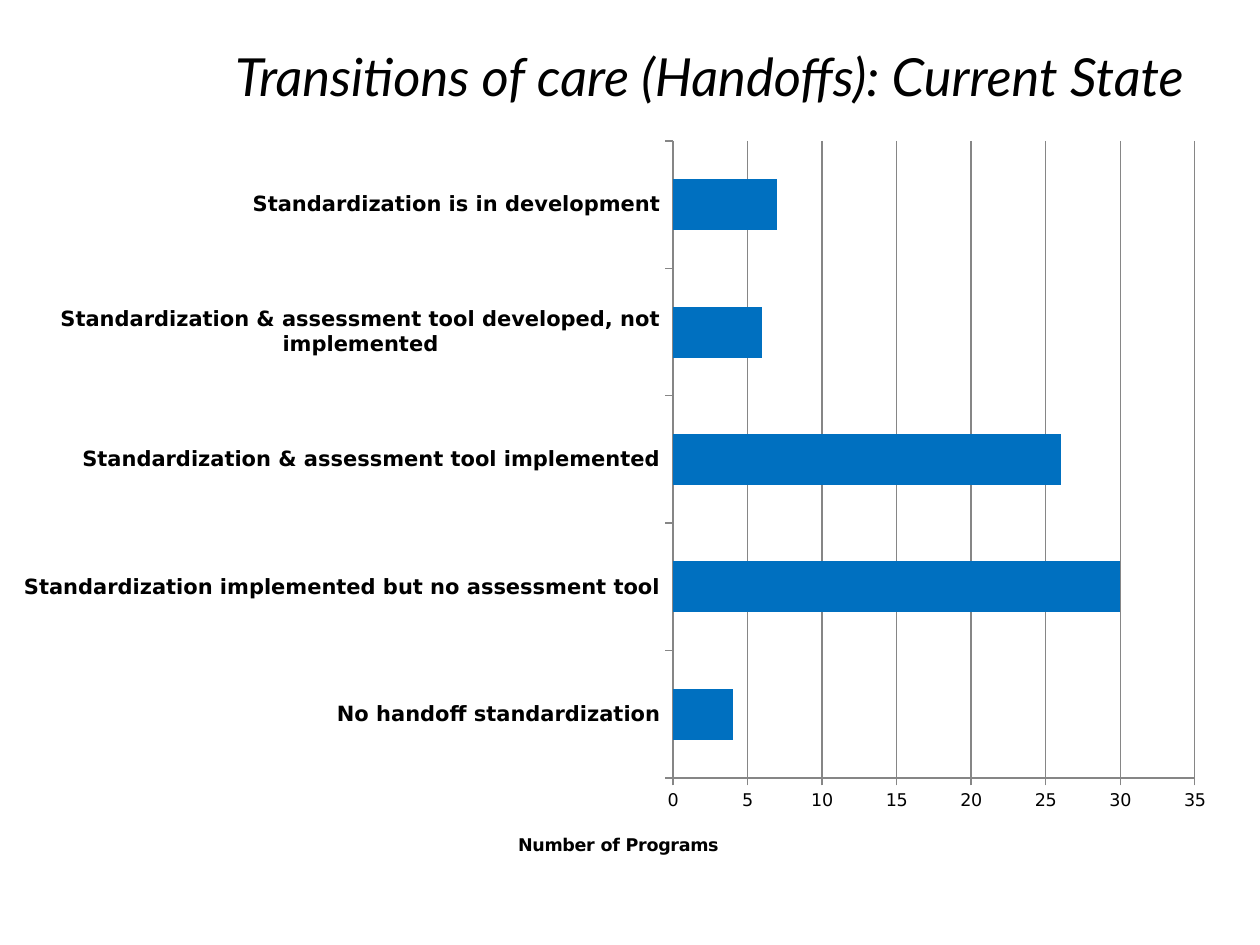
"""Build the slide on the current state of handoff standardization."""
from dataclasses import dataclass
from typing import NamedTuple

from lxml import etree
from pptx import Presentation, util as u
from pptx.chart.data import CategoryChartData
from pptx.dml.color import RGBColor
from pptx.enum import chart as ch, text
from pptx.oxml.ns import qn

EMU_PER_PX = 914400 / 126


@dataclass(frozen=True)
class Theme:
    """Colours, fonts and type sizes of the slide."""
    ink: RGBColor = RGBColor(0x00, 0x00, 0x00)
    bar: RGBColor = RGBColor(0x00, 0x70, 0xC0)
    rule: RGBColor = RGBColor(0x86, 0x86, 0x86)
    title_font: str = "Lato"
    chart_font: str = "DejaVu Sans"
    title_size: int = 30
    category_size: int = 12
    chart_size: int = 10


class Box(NamedTuple):
    """A rectangle in px."""
    left: int
    top: int
    width: int
    height: int


class Status(NamedTuple):
    """A handoff status and its number of programs."""
    label: str
    programs: int


THEME = Theme()
TITLE = Box(63, 38, 1134, 158)
CHART = Box(0, 126, 1231, 751)
PLOT = Box(673, 141, 522, 637)
AXIS_TITLE = Box(515, 831, 200, 18)
STATUSES = [
    Status("No handoff standardization", 4),
    Status("Standardization implemented but no assessment tool", 30),
    Status("Standardization & assessment tool implemented", 26),
    Status("Standardization & assessment tool developed, not implemented", 6),
    Status("Standardization is in development", 7),
]


def px(length: int) -> u.Emu:
    """Turn px into EMU."""
    return u.Emu(round(length * EMU_PER_PX))


def style(font, size: int, name: str, bold: bool = False, italic: bool = False) -> None:
    """Format a font in the ink colour."""
    font.size, font.name = u.Pt(size), name
    font.bold, font.italic = bold, italic
    font.color.rgb = THEME.ink


def set_layout(parent, index: int, box: Box, sized: bool) -> None:
    """Place a chart part at a box, as fractions of the chart area."""
    for old in parent.findall(qn("c:layout")):
        parent.remove(old)
    layout = etree.Element(qn("c:layout"))
    manual = etree.SubElement(layout, qn("c:manualLayout"))
    settings = {"xMode": "edge", "yMode": "edge",
                "x": round((box.left - CHART.left) / CHART.width, 4),
                "y": round((box.top - CHART.top) / CHART.height, 4)}
    if sized:
        settings = {"layoutTarget": "inner", **settings,
                    "w": round(box.width / CHART.width, 4),
                    "h": round(box.height / CHART.height, 4)}
    for tag, value in settings.items():
        etree.SubElement(manual, qn(f"c:{tag}")).set("val", str(value))
    parent.insert(index, layout)


def draw_title(slide, wording: str) -> None:
    """Fill and format the title placeholder."""
    title = slide.shapes.title
    title.left, title.top, title.width, title.height = map(px, TITLE)
    frame = title.text_frame
    frame.auto_size = text.MSO_AUTO_SIZE.NONE
    frame.vertical_anchor = text.MSO_ANCHOR.TOP
    heading = frame.paragraphs[0]
    heading.alignment = text.PP_ALIGN.RIGHT
    run = heading.add_run()
    run.text = wording
    style(run.font, THEME.title_size, THEME.title_font, italic=True)


def draw_chart(slide, statuses: list[Status]) -> None:
    """Draw the number of programs at each status as bars."""
    counts = CategoryChartData()
    counts.categories = [status.label for status in statuses]
    counts.add_series("Series 1", [status.programs for status in statuses])
    chart = slide.shapes.add_chart(
        ch.XL_CHART_TYPE.BAR_CLUSTERED, *map(px, CHART), counts).chart
    chart.has_legend = chart.has_title = False
    style(chart.font, THEME.chart_size, THEME.chart_font)

    bars = chart.plots[0]
    bars.gap_width, bars.vary_by_categories = 150, False
    fill = bars.series[0].format.fill
    fill.solid()
    fill.fore_color.rgb = THEME.bar

    programs, labels = chart.value_axis, chart.category_axis
    for axis in (programs, labels):
        axis.major_tick_mark = ch.XL_TICK_MARK.OUTSIDE
        axis.minor_tick_mark = ch.XL_TICK_MARK.NONE
        axis.format.line.color.rgb = THEME.rule
    style(labels.tick_labels.font, THEME.category_size, THEME.chart_font, bold=True)
    labels.has_major_gridlines = False

    programs.minimum_scale, programs.maximum_scale, programs.major_unit = 0, 35, 5
    programs.has_major_gridlines = True
    programs.major_gridlines.format.line.color.rgb = THEME.rule
    run = programs.axis_title.text_frame.paragraphs[0].add_run()
    run.text = "Number of Programs"
    style(run.font, THEME.chart_size, THEME.chart_font, bold=True)

    set_layout(bars._element.getparent(), 0, PLOT, sized=True)
    set_layout(programs.axis_title._element, 1, AXIS_TITLE, sized=False)


def main() -> None:
    """Build and save the slide."""
    deck = Presentation()
    deck.slide_width, deck.slide_height = px(1260), px(945)
    slide = deck.slides.add_slide(deck.slide_layouts[5])
    draw_chart(slide, STATUSES)
    draw_title(slide, "Transitions of care (Handoffs): Current State")
    deck.save("out.pptx")


if __name__ == "__main__":
    main()
